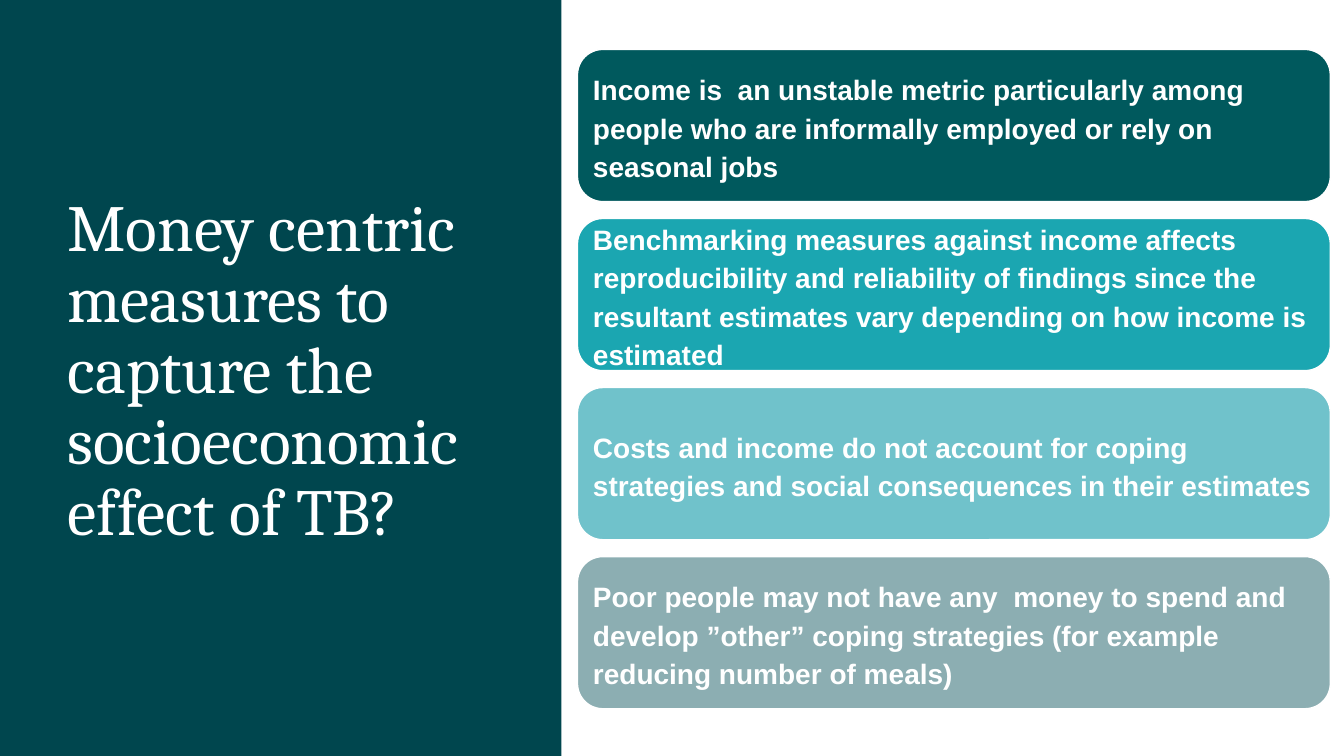
import pptx
import pptx.dml.color
import pptx.enum.shapes
import pptx.enum.text
import pptx.util

Pt = pptx.util.Pt
RGBColor = pptx.dml.color.RGBColor
MSO_SHAPE = pptx.enum.shapes.MSO_SHAPE
MIDDLE = pptx.enum.text.MSO_ANCHOR.MIDDLE
LEFT = pptx.enum.text.PP_ALIGN.LEFT

WHITE = RGBColor(0xFF, 0xFF, 0xFF)
PANEL = RGBColor(0x00, 0x46, 0x4E)
DARK_TEAL = RGBColor(0x00, 0x59, 0x5D)
TEAL = RGBColor(0x1B, 0xA6, 0xB1)
LIGHT_TEAL = RGBColor(0x70, 0xC2, 0xCB)
GREY_TEAL = RGBColor(0x8C, 0xAE, 0xB2)

TITLE_FONT = {"name": "Cambria", "size": Pt(47), "bold": False}
CARD_FONT = {"name": "Arial", "size": Pt(20), "bold": True}

CARDS = [
    (DARK_TEAL, "Income is  an unstable metric particularly among people who are "
                "informally employed or rely on seasonal jobs"),
    (TEAL, "Benchmarking measures against income affects reproducibility and reliability "
           "of findings since the resultant estimates vary depending on how income is estimated"),
    (LIGHT_TEAL, "Costs and income do not account for coping strategies and social "
                 "consequences in their estimates"),
    (GREY_TEAL, "Poor people may not have any  money to spend and  develop ”other” coping "
                "strategies (for example reducing number of meals)"),
]
CARD_LEFT, CARD_TOP, CARD_WIDTH, CARD_HEIGHT = 412.5, 35.3, 537.8, 108.7
CARD_PITCH = 120.75


def write_text(sp, text, spacing, font):
    tf = sp.text_frame
    tf.word_wrap = True
    tf.auto_size = pptx.enum.text.MSO_AUTO_SIZE.NONE
    tf.vertical_anchor = MIDDLE
    p = tf.paragraphs[0]
    p.alignment = LEFT
    p.line_spacing = spacing
    p.space_before = Pt(0)
    r = p.add_run()
    r.text = text
    for key, value in font.items():
        setattr(r.font, key, value)
    r.font.color.rgb = WHITE


def add_block(kind, left, top, width, height, color):
    sp = slide.shapes.add_shape(kind, Pt(left), Pt(top), Pt(width), Pt(height))
    sp.shadow.inherit = False
    sp.fill.solid()
    sp.fill.fore_color.rgb = color
    return sp


prs = pptx.Presentation()
prs.slide_width, prs.slide_height = Pt(960), Pt(540)
slide = prs.slides.add_slide(prs.slide_layouts[5])

# Left panel, behind the title
panel = add_block(MSO_SHAPE.RECTANGLE, 0, 0, 401, 540, PANEL)
panel.line.fill.background()
slide.shapes._spTree.insert(2, panel._element)

# Title
title = slide.shapes.title
title.left, title.top, title.width, title.height = Pt(41), Pt(49), Pt(330), Pt(433.5)
write_text(title, "Money centric measures to capture the socioeconomic effect of TB?",
           0.9, TITLE_FONT)

# Stacked cards
for i, (color, text) in enumerate(CARDS):
    card = add_block(MSO_SHAPE.ROUNDED_RECTANGLE, CARD_LEFT, CARD_TOP + i * CARD_PITCH,
                     CARD_WIDTH, CARD_HEIGHT, color)
    card.line.color.rgb = WHITE
    card.line.width = Pt(1)
    for side in ("left", "top", "right", "bottom"):
        setattr(card.text_frame, f"margin_{side}", Pt(5.75))
    write_text(card, text, 1.14, CARD_FONT)

prs.save("out.pptx")
